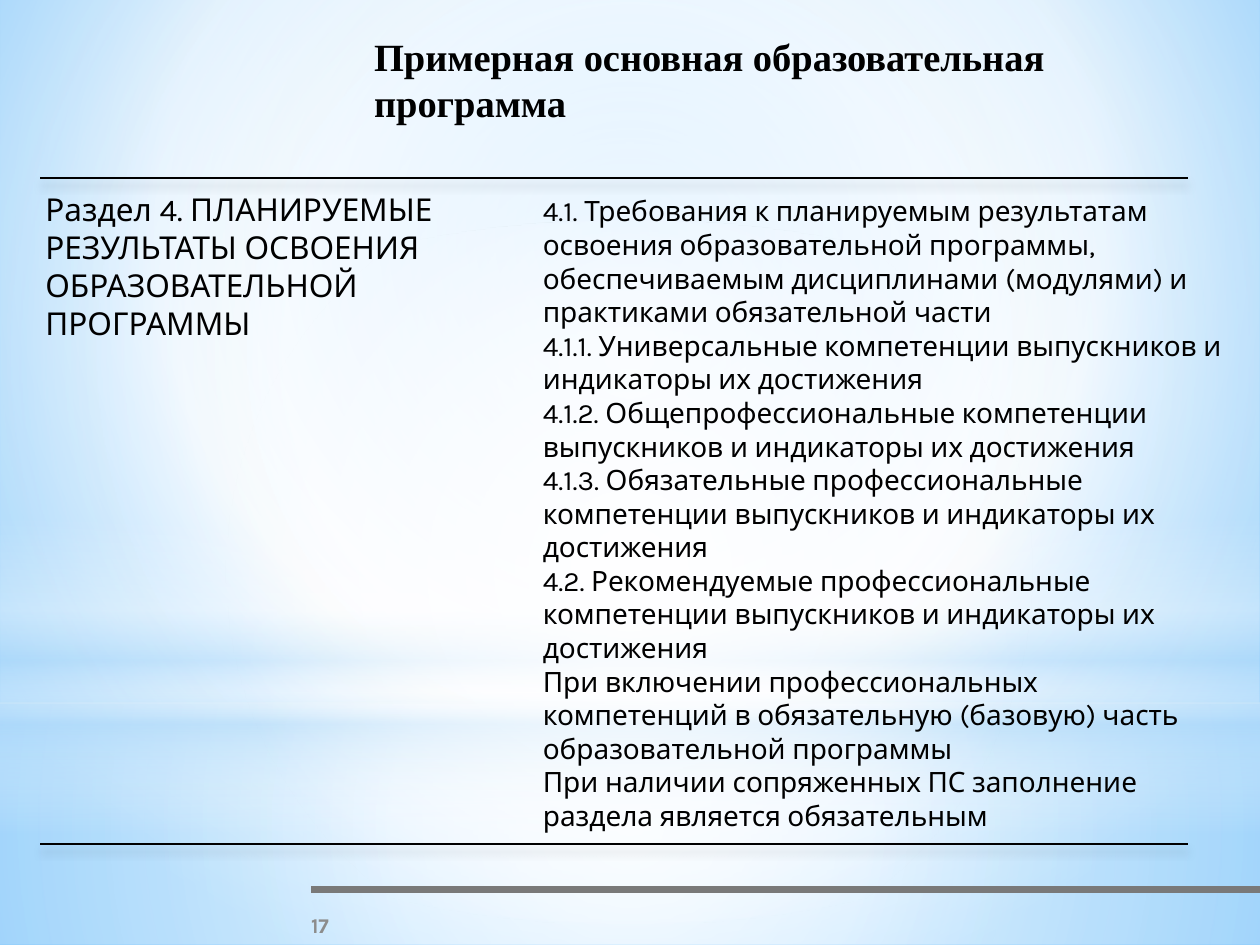
from pptx import Presentation
from pptx.dml.color import RGBColor as Rgb
from pptx.enum.shapes import MSO_CONNECTOR as Conn, MSO_SHAPE as Geo
from pptx.enum.text import MSO_ANCHOR as Anchor, MSO_AUTO_SIZE as Fit, PP_ALIGN as Align
from pptx.oxml import parse_xml
from pptx.oxml.ns import nsdecls
from pptx.util import Inches, Pt

COLS, ROWS = 100, 75  # grid over the 10 x 7.5 inch slide
LEFT, RIGHT, SPLIT = 3.2, 94.3, 42.1
TOP, BASE = 14.1, 67
WHITE, SKY = "FFFFFF", "B4DCFA"
CENTRE = (50, 50, 50, 50)

SECTION = "Раздел 4. ПЛАНИРУЕМЫЕ РЕЗУЛЬТАТЫ ОСВОЕНИЯ ОБРАЗОВАТЕЛЬНОЙ ПРОГРАММЫ"
ITEMS = [
    "4.1. Требования к планируемым результатам освоения образовательной программы, "
    "обеспечиваемым дисциплинами (модулями) и практиками обязательной части",
    "4.1.1. Универсальные компетенции выпускников и индикаторы их достижения",
    "4.1.2. Общепрофессиональные компетенции выпускников и индикаторы их достижения",
    "4.1.3. Обязательные профессиональные компетенции выпускников и индикаторы их достижения",
    "4.2. Рекомендуемые профессиональные компетенции выпускников и индикаторы их достижения",
    "При включении профессиональных компетенций в обязательную (базовую) часть "
    "образовательной программы",
    "При наличии сопряженных ПС заполнение раздела является обязательным",
]


def color(code):
    return Rgb.from_string(code)


def blend(root, stops, focus=None):
    """Swap the first solid fill under root for a gradient of (place, colour, opacity)."""
    marks = "".join(
        f'<a:gs pos="{at * 1000}"><a:srgbClr val="{code}">'
        f'<a:alpha val="{alpha * 1000}"/></a:srgbClr></a:gs>'
        for at, code, alpha in stops)
    if focus:
        sides = " ".join(f'{side}="{part * 1000}"' for side, part in zip("ltrb", focus))
        way = f'<a:path path="circle"><a:fillToRect {sides}/></a:path>'
    else:
        way = '<a:lin ang="5400000" scaled="0"/>'
    solid = root.xpath(".//a:solidFill")[0]
    solid.getparent().replace(solid, parse_xml(
        f'<a:gradFill {nsdecls("a")} rotWithShape="1"><a:gsLst>{marks}</a:gsLst>{way}</a:gradFill>'))


class Page:
    font, ink = "Karla", "000000"

    def __init__(self, deck):
        self.wide, self.high = deck.slide_width, deck.slide_height
        self.slide = deck.slides.add_slide(deck.slide_layouts[6])
        self.shapes = self.slide.shapes

    def place(self, *cells):
        """Turn columns and rows, in turn, into lengths."""
        return [round(n * (self.high / ROWS if i % 2 else self.wide / COLS))
                for i, n in enumerate(cells)]

    def back(self, stops, focus):
        self.slide.background.fill.solid()
        self.slide.background.fill.fore_color.rgb = color(WHITE)
        blend(self.slide.element, stops, focus)

    def glow(self, top, tall, stops, focus=None, geo=Geo.RECTANGLE):
        shape = self.shapes.add_shape(geo, *self.place(0, top, COLS, tall))
        shape.shadow.inherit = False
        shape.fill.solid()
        shape.fill.fore_color.rgb = color(WHITE)
        shape.line.fill.background()
        blend(shape.element.spPr, stops, focus)

    def rule(self, left, row, right, width, code, shade=False):
        line = self.shapes.add_connector(Conn.STRAIGHT, *self.place(left, row, right, row))
        line.line.color.rgb = color(code)
        line.line.width = Pt(width)
        drop = (f'<a:outerShdw blurRad="{Pt(5)}" dist="{Pt(4)}" dir="5400000" rotWithShape="0">'
                '<a:srgbClr val="000000"><a:alpha val="20000"/></a:srgbClr></a:outerShdw>')
        line.element.spPr.append(parse_xml(
            f'<a:effectLst {nsdecls("a")}>{drop if shade else ""}</a:effectLst>'))

    def text(self, cells, words, size, font=None, code=None, bold=False,
             align=Align.LEFT, anchor=Anchor.TOP, fit=Fit.SHAPE_TO_FIT_TEXT, inset=None):
        frame = self.shapes.add_textbox(*self.place(*cells)).text_frame
        frame.word_wrap, frame.auto_size = True, fit
        frame.vertical_anchor = anchor
        if inset:
            frame.margin_left = frame.margin_right = Inches(inset[0])
            frame.margin_top = frame.margin_bottom = Inches(inset[1])
        frame.text = words
        for para in frame.paragraphs:
            para.alignment = align
            for run in para.runs:
                run.font.name, run.font.size = font or self.font, Pt(size)
                run.font.bold = bold
                run.font.color.rgb = color(code or self.ink)


def main():
    deck = Presentation()
    deck.slide_width, deck.slide_height = Inches(10), Inches(7.5)
    page = Page(deck)

    # Sky backdrop
    page.back([(0, "9ED5FF", 100), (60, WHITE, 100), (100, "5BB9FF", 100)], (20, 10, 20, 60))
    page.glow(55.8, 19.2, [(0, WHITE, 91), (37, WHITE, 76), (100, SKY, 79)], CENTRE)
    page.glow(0, 55.8, [(0, WHITE, 89), (48, WHITE, 62), (100, SKY, 79)], CENTRE)
    page.glow(41.2, 25, [(0, WHITE, 0), (29, WHITE, 30), (45, SKY, 40),
                         (55, WHITE, 26), (65, SKY, 60), (100, WHITE, 0)])
    page.glow(17.5, 55.8, [(0, WHITE, 100), (56, WHITE, 0)], CENTRE, Geo.OVAL)

    # Footer
    page.rule(24.7, 70.6, COLS, 4, "797979")
    page.text((15.4, 71.4, 20, 4), "17", 12, code="8C8C8C", bold=True,
              align=Align.CENTER, anchor=Anchor.MIDDLE, fit=Fit.NONE)

    # Title
    page.text((28.7, 2.1, 67.8, 8.4), "Примерная основная образовательная программа", 22,
              font="Times New Roman", bold=True)

    # Section name and its contents between two rules
    for row in (TOP, BASE):
        page.rule(LEFT, row, RIGHT, 1.25, page.ink, shade=True)
    page.text((LEFT, 14.9, SPLIT - LEFT, 12.6), SECTION, 18, inset=(0.04, 0.02))
    page.text((SPLIT, 14.9, 55.9, 52.2), "\n".join(ITEMS), 16)

    deck.save("out.pptx")


if __name__ == "__main__":
    main()
